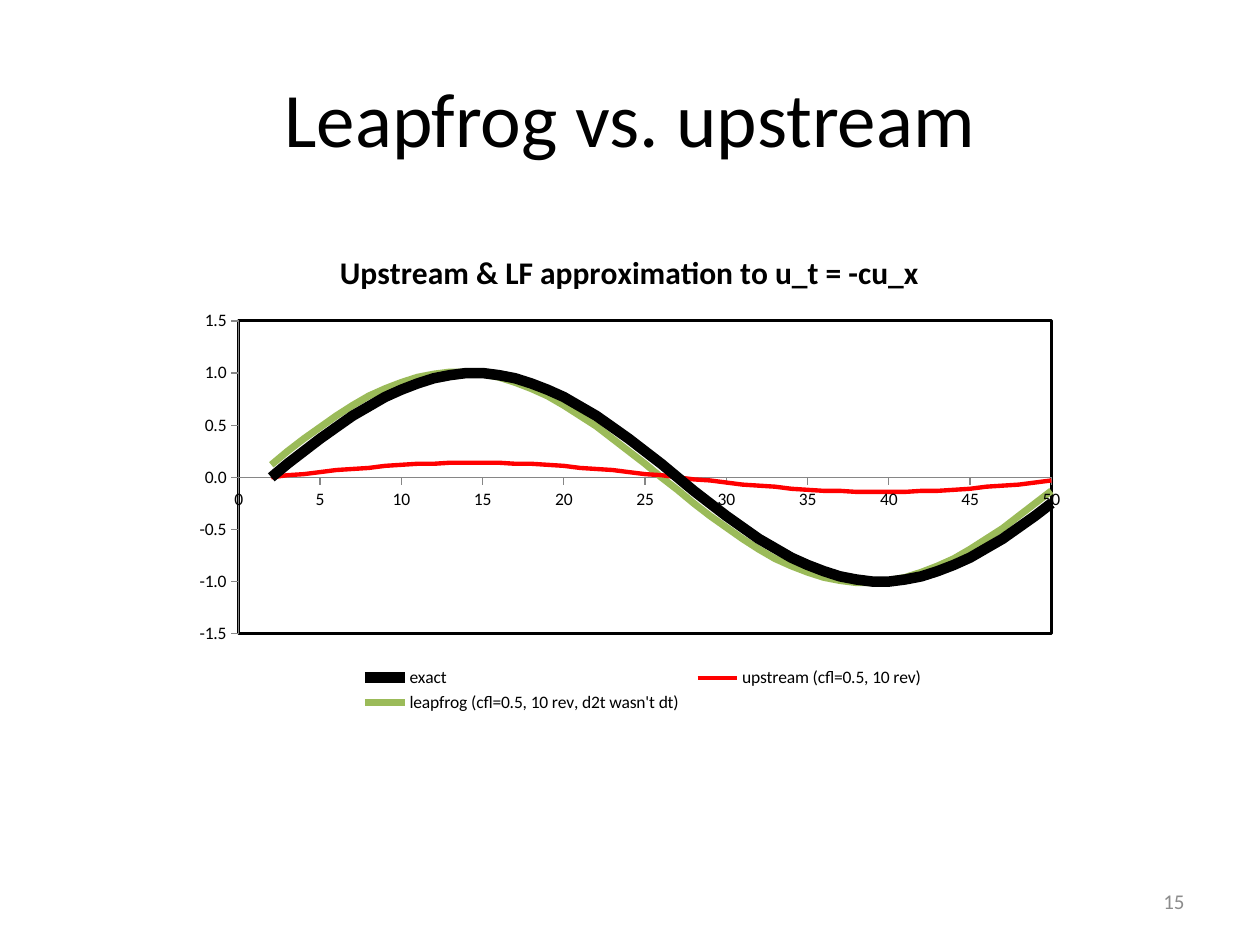
from math import pi, sin

from lxml import etree
from pptx import Presentation
from pptx.chart.data import XyChartData
from pptx.dml.color import RGBColor
from pptx.enum.chart import XL_CHART_TYPE as ChartType, XL_LEGEND_POSITION as LegendPosition
from pptx.enum.chart import XL_TICK_MARK as TickMark
from pptx.enum.text import MSO_ANCHOR as Anchor, PP_ALIGN as Align
from pptx.oxml import parse_xml
from pptx.oxml.ns import qn
from pptx.util import Pt

FONT = "Calibri"
POINTS = 50  # grid points in one wave
# name, amplitude, phase in grid points, colour, line width
WAVES = [
    ("exact", 1, 0, "000000", 6),
    ("upstream (cfl=0.5, 10 rev)", 0.1385, 0, "FF0000", 2.5),
    ("leapfrog (cfl=0.5, 10 rev, d2t wasn't dt)", 1.008, 0.98, "9BBB59", 4),
]


def colour(value):
    return RGBColor.from_string(value)


def style_font(font, size, value="000000", bold=False):
    font.name, font.size, font.bold = FONT, Pt(size), bold
    font.color.rgb = colour(value)


def place(shape, box):
    shape.left, shape.top, shape.width, shape.height = map(Pt, box)


def write(shape, text, size, value, align):
    frame = shape.text_frame
    frame.word_wrap = True
    frame.vertical_anchor = Anchor.MIDDLE
    paragraph = frame.paragraphs[0]
    paragraph.alignment = align
    run = paragraph.add_run()
    run.text = text
    style_font(run.font, size, value)


def add_title(slide, box):
    place(slide.shapes.title, box)
    write(slide.shapes.title, "Leapfrog vs. upstream", 44, "000000", Align.CENTER)


def add_page_number(slide, box):
    write(slide.shapes.add_textbox(*map(Pt, box)), "15", 12, "8C8C8C", Align.RIGHT)


def wave_data():
    data = XyChartData()
    for name, amplitude, phase, *_ in WAVES:
        series = data.add_series(name)
        for i in range(POINTS):
            value = amplitude * sin(2 * pi * (i + phase) / POINTS)
            series.add_data_point(i + 2, round(value, 2))
    return data


def layout_xml(x, y, width, height, inner=False):
    """Manual layout, in fractions of the chart's box."""
    namespace = "http://schemas.openxmlformats.org/drawingml/2006/chart"
    target = '<c:layoutTarget val="inner"/>' if inner else ""
    values = zip("xywh", (x, y, width, height))
    sizes = "".join(f'<c:{key} val="{value}"/>' for key, value in values)
    return parse_xml(
        f'<c:layout xmlns:c="{namespace}"><c:manualLayout>{target}'
        '<c:xMode val="edge"/><c:yMode val="edge"/>'
        f"{sizes}</c:manualLayout></c:layout>")


def style_axis(axis, low, high, step, number_format):
    axis.minimum_scale, axis.maximum_scale, axis.major_unit = low, high, step
    axis.has_major_gridlines = False
    axis.major_tick_mark, axis.minor_tick_mark = TickMark.OUTSIDE, TickMark.NONE
    axis.tick_labels.number_format = number_format
    axis.tick_labels.number_format_is_linked = False
    axis.format.line.color.rgb = colour("868686")
    axis.format.line.width = Pt(0.75)


def frame_plot(chart):
    """Places the plot area and gives it a white fill and a black border."""
    plot_area = chart._chartSpace.chart.plotArea
    for old in plot_area.findall(qn("c:layout")):
        plot_area.remove(old)
    plot_area.insert(0, layout_xml(0.064, 0.19, 0.907, 0.64, inner=True))
    properties = etree.SubElement(plot_area, qn("c:spPr"))
    fill = etree.SubElement(properties, qn("a:solidFill"))
    etree.SubElement(fill, qn("a:srgbClr"), val="FFFFFF")
    line = etree.SubElement(properties, qn("a:ln"), w=str(Pt(1.75)))
    line_fill = etree.SubElement(line, qn("a:solidFill"))
    etree.SubElement(line_fill, qn("a:srgbClr"), val="000000")


def add_wave_chart(slide, box):
    chart = slide.shapes.add_chart(
        ChartType.XY_SCATTER_LINES_NO_MARKERS, *map(Pt, box), wave_data()).chart
    style_font(chart.font, 10)

    # Chart title
    chart.has_title = True
    run = chart.chart_title.text_frame.paragraphs[0].add_run()
    run.text = "Upstream & LF approximation to u_t = -cu_x"
    style_font(run.font, 18, bold=True)
    chart.chart_title.include_in_layout = False

    # Axes and plot area
    style_axis(chart.category_axis, 0, 50, 5, "General")
    style_axis(chart.value_axis, -1.5, 1.5, 0.5, "#,##0.0")
    frame_plot(chart)

    # Curves
    chart.plots[0].vary_by_categories = False
    for series, (*_, value, width) in zip(chart.plots[0].series, WAVES):
        series.smooth = False
        series.format.line.color.rgb = colour(value)
        series.format.line.width = Pt(width)

    # Legend
    chart.has_legend = True
    legend = chart.legend
    legend.position = LegendPosition.BOTTOM
    legend.include_in_layout = False
    style_font(legend.font, 10)
    element = legend._element
    for old in element.findall(qn("c:layout")):
        element.remove(old)
    element.find(qn("c:legendPos")).addnext(layout_xml(0.19, 0.89, 0.65, 0.11))


def main():
    presentation = Presentation()
    presentation.slide_width, presentation.slide_height = Pt(720), Pt(540)
    slide = presentation.slides.add_slide(presentation.slide_layouts[5])
    add_title(slide, (36, 21.6, 648, 90))
    add_wave_chart(slide, (103.7, 130.3, 512, 279.4))
    add_page_number(slide, (516, 500.5, 168, 28.8))
    presentation.save("out.pptx")


if __name__ == "__main__":
    main()
